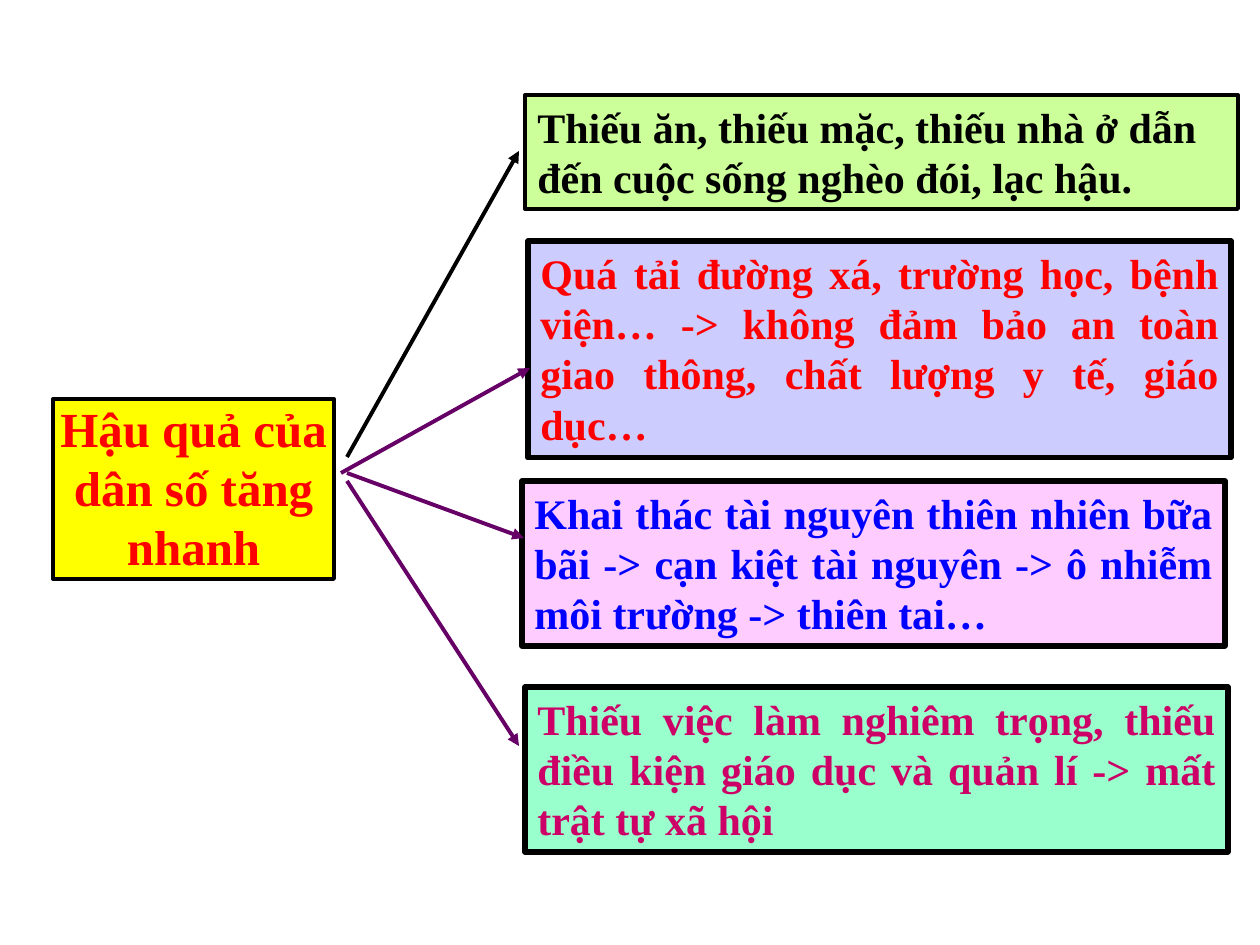
from lxml import etree
from pptx import Presentation
from pptx.dml.color import RGBColor
from pptx.enum.shapes import MSO_CONNECTOR, MSO_SHAPE
from pptx.enum.text import MSO_ANCHOR, MSO_AUTO_SIZE, PP_ALIGN
from pptx.oxml.ns import qn
from pptx.util import Pt

SCALE = 914400 / 126  # EMU per px
FONT = "Times New Roman"
RECTANGLE = MSO_SHAPE.RECTANGLE
STRAIGHT = MSO_CONNECTOR.STRAIGHT
TOP = MSO_ANCHOR.TOP
GROW = MSO_AUTO_SIZE.SHAPE_TO_FIT_TEXT
LEFT, CENTER, JUSTIFY = PP_ALIGN.LEFT, PP_ALIGN.CENTER, PP_ALIGN.JUSTIFY

BLACK = RGBColor(0x00, 0x00, 0x00)
RED = RGBColor(0xFF, 0x00, 0x00)
BLUE = RGBColor(0x00, 0x00, 0xFF)
CRIMSON = RGBColor(0xCC, 0x00, 0x66)
PURPLE = RGBColor(0x66, 0x00, 0x66)
YELLOW = RGBColor(0xFF, 0xFF, 0x00)
LIME = RGBColor(0xCC, 0xFF, 0x99)
LAVENDER = RGBColor(0xCC, 0xCC, 0xFF)
PINK = RGBColor(0xFF, 0xCC, 0xFF)
MINT = RGBColor(0x99, 0xFF, 0xCC)

CAUSE_BOX = (53, 399, 281, 180)
# box, text, fill, text colour, border width, alignment
EFFECTS = [
    ((525, 95, 713, 114),
     "Thiếu ăn, thiếu mặc, thiếu nhà ở dẫn đến cuộc sống nghèo đói, lạc hậu.",
     LIME, BLACK, 2.25, LEFT),
    ((528, 241, 703, 217),
     "Quá tải đường xá, trường học, bệnh viện… -> không đảm bảo an toàn "
     "giao thông, chất lượng y tế, giáo dục…",
     LAVENDER, RED, 3, JUSTIFY),
    ((522, 481, 703, 165),
     "Khai thác tài nguyên thiên nhiên bữa bãi -> cạn kiệt tài nguyên "
     "-> ô nhiễm môi trường -> thiên tai…",
     PINK, BLUE, 3, JUSTIFY),
    ((525, 687, 703, 165),
     "Thiếu việc làm nghiêm trọng, thiếu điều kiện giáo dục và quản lí "
     "-> mất trật tự xã hội",
     MINT, CRIMSON, 3, JUSTIFY),
]
# start, end, colour
ARROWS = [
    ((347, 457), (519, 151), BLACK),
    ((341, 473), (530, 368), PURPLE),
    ((347, 473), (524, 538), PURPLE),
    ((347, 481), (519, 746), PURPLE),
]


def px(*lengths):
    return [round(length * SCALE) for length in lengths]


def add_text_panel(page, box, text, fill, color, border, align, size=24):
    panel = page.shapes.add_shape(RECTANGLE, *px(*box))
    panel.shadow.inherit = False
    panel.fill.solid()
    panel.fill.fore_color.rgb = fill
    panel.line.color.rgb = BLACK
    panel.line.width = Pt(border)
    frame = panel.text_frame
    frame.word_wrap = True
    frame.auto_size = GROW
    frame.vertical_anchor = TOP
    para = frame.paragraphs[0]
    para.text = text
    para.alignment = align
    para.font.name = FONT
    para.font.size = Pt(size)
    para.font.bold = True
    para.font.color.rgb = color
    return panel


def add_cause(page, box):
    panel = add_text_panel(page, box, "Hậu quả của dân số tăng nhanh",
                           YELLOW, RED, 2.25, CENTER, size=28)
    frame = panel.text_frame
    frame.margin_left = frame.margin_right = 0
    frame.margin_top = frame.margin_bottom = 0


def add_arrow(page, start, end, color):
    arrow = page.shapes.add_connector(STRAIGHT, *px(*start, *end))
    arrow.line.color.rgb = color
    arrow.line.width = Pt(2.25)
    etree.SubElement(arrow.line._get_or_add_ln(), qn("a:tailEnd"), type="triangle")
    etree.SubElement(arrow._element.spPr, qn("a:effectLst"))


def main():
    deck = Presentation()
    deck.slide_width, deck.slide_height = px(1260, 945)
    page = deck.slides.add_slide(deck.slide_layouts[6])
    add_cause(page, CAUSE_BOX)
    for effect in EFFECTS:
        add_text_panel(page, *effect)
    for arrow in ARROWS:
        add_arrow(page, *arrow)
    deck.save("out.pptx")


if __name__ == "__main__":
    main()
